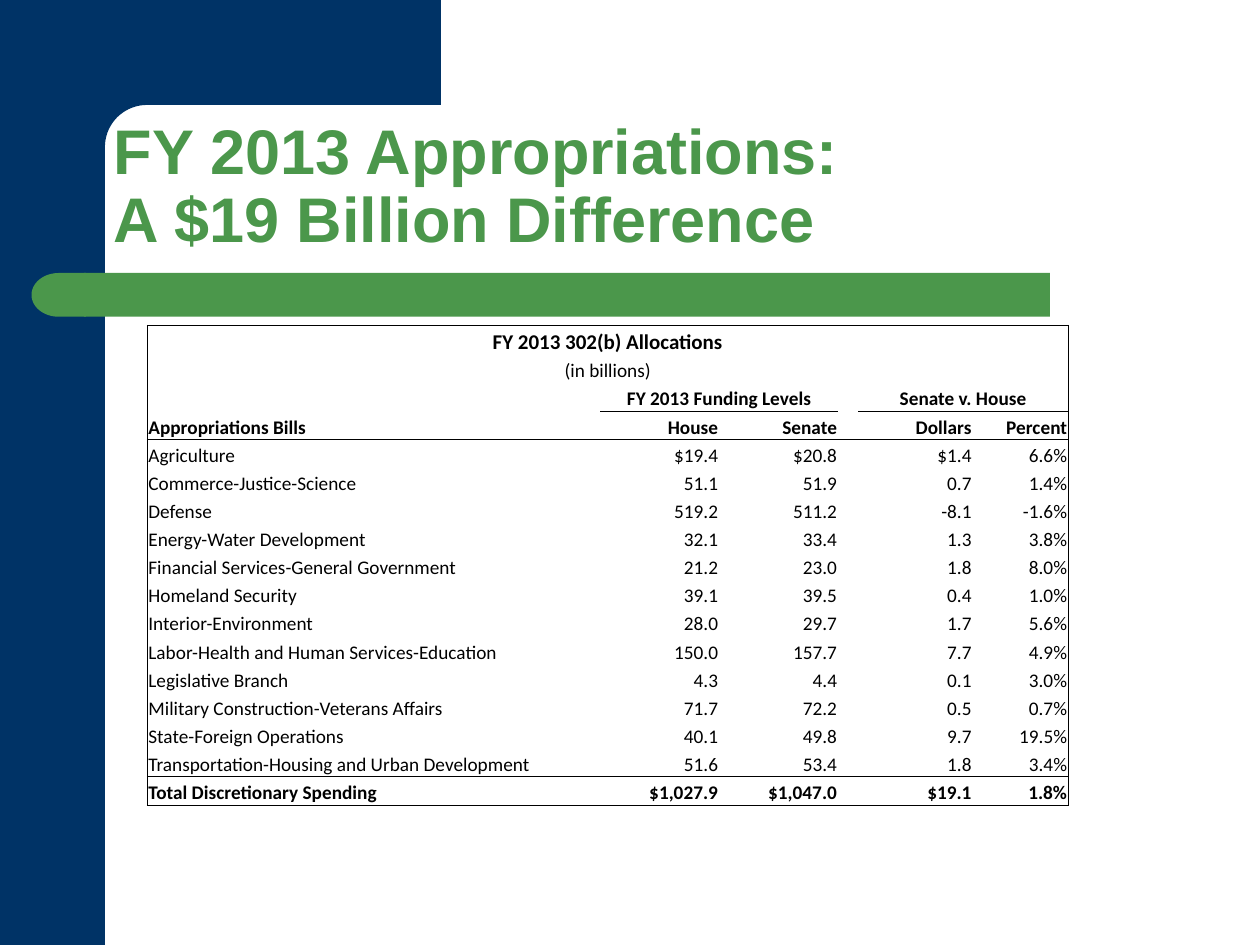
from dataclasses import dataclass
from math import cos, radians, sin

from pptx import Presentation
from pptx.dml.color import RGBColor
from pptx.enum.shapes import MSO_SHAPE
from pptx.enum.text import MSO_ANCHOR, PP_ALIGN
from pptx.oxml.xmlchemy import OxmlElement
from pptx.util import Pt

NAVY = RGBColor(0x00, 0x33, 0x66)
GREEN = RGBColor(0x4B, 0x97, 0x4B)
BLACK = RGBColor(0x00, 0x00, 0x00)
WHITE = RGBColor(0xFF, 0xFF, 0xFF)
RECTANGLE = MSO_SHAPE.RECTANGLE
DELAY = MSO_SHAPE.FLOWCHART_DELAY
BOTTOM = MSO_ANCHOR.BOTTOM
LEFT, CENTER, RIGHT = PP_ALIGN.LEFT, PP_ALIGN.CENTER, PP_ALIGN.RIGHT


@dataclass(frozen=True)
class Panel:
    kind: MSO_SHAPE
    left: float
    top: float
    width: float
    height: float
    color: RGBColor
    rotation: int = 0


@dataclass(frozen=True)
class Heading:
    row: int
    column: int
    span: int
    text: str
    size: int = 11
    bold: bool = True


SIDEBAR = Panel(RECTANGLE, 0, 0, 60, 540, NAVY)
BAR = [
    Panel(RECTANGLE, 48, 156, 552, 25, GREEN),
    Panel(DELAY, 18, 156, 31, 25, GREEN, 180),
]
TITLE_LINES = ["FY 2013 Appropriations:", "A $19 Billion Difference"]
HEADINGS = [
    Heading(0, 0, 6, "FY 2013 302(b) Allocations", 12),
    Heading(1, 0, 6, "(in billions)", 11, False),
    Heading(2, 1, 2, "FY 2013 Funding Levels"),
    Heading(2, 4, 2, "Senate v. House"),
]
ALLOCATIONS = [
    ("Appropriations Bills", "House", "Senate", "Dollars", "Percent"),
    ("Agriculture", "$19.4", "$20.8", "$1.4", "6.6%"),
    ("Commerce-Justice-Science", "51.1", "51.9", "0.7", "1.4%"),
    ("Defense", "519.2", "511.2", "-8.1", "-1.6%"),
    ("Energy-Water Development", "32.1", "33.4", "1.3", "3.8%"),
    ("Financial Services-General Government", "21.2", "23.0", "1.8", "8.0%"),
    ("Homeland Security", "39.1", "39.5", "0.4", "1.0%"),
    ("Interior-Environment", "28.0", "29.7", "1.7", "5.6%"),
    ("Labor-Health and Human Services-Education", "150.0", "157.7", "7.7", "4.9%"),
    ("Legislative Branch", "4.3", "4.4", "0.1", "3.0%"),
    ("Military Construction-Veterans Affairs", "71.7", "72.2", "0.5", "0.7%"),
    ("State-Foreign Operations", "40.1", "49.8", "9.7", "19.5%"),
    ("Transportation-Housing and Urban Development", "51.6", "53.4", "1.8", "3.4%"),
    ("Total Discretionary Spending", "$1,027.9", "$1,047.0", "$19.1", "1.8%"),
]
FIRST_ROW = 3
VALUE_COLUMNS = (0, 1, 2, 4, 5)
GAP_COLUMN = 3
COLUMN_WIDTHS = (258.8, 68, 68, 11.4, 65.5, 54.6)
ROW_COUNT = FIRST_ROW + len(ALLOCATIONS)
ROW_HEIGHTS = [17] + [16.08] * (ROW_COUNT - 1)
FULL_RULES = {0, FIRST_ROW + 1, ROW_COUNT - 1, ROW_COUNT}
CELL_FORMAT = {
    "margin_left": Pt(0.6),
    "margin_right": Pt(0.6),
    "margin_top": Pt(0.6),
    "margin_bottom": Pt(0),
    "vertical_anchor": BOTTOM,
}
TITLE_FORMAT = {
    "margin_left": Pt(5),
    "margin_right": Pt(5),
    "margin_top": Pt(3.6),
    "margin_bottom": Pt(3.6),
    "vertical_anchor": BOTTOM,
    "word_wrap": True,
}


def apply_format(target, values: dict) -> None:
    for name, value in values.items():
        setattr(target, name, value)


def style_font(font, name: str, size: float, bold: bool, color: RGBColor) -> None:
    apply_format(font, {"name": name, "size": Pt(size), "bold": bold})
    font.color.rgb = color


def paint(shape, color: RGBColor) -> None:
    shape.shadow.inherit = False
    shape.fill.solid()
    shape.fill.fore_color.rgb = color
    shape.line.fill.background()


def draw_panel(page, panel: Panel) -> None:
    box = [Pt(length) for length in (panel.left, panel.top, panel.width, panel.height)]
    shape = page.shapes.add_shape(panel.kind, *box)
    shape.rotation = panel.rotation
    paint(shape, panel.color)


def draw_corner(page) -> None:
    center, radius = 84, 24
    arc = [
        (center - radius * sin(radians(angle)), center - radius * cos(radians(angle)))
        for angle in range(0, 91, 5)
    ]
    outline = [(252, 60), *arc, (60, 92), (36, 92), (36, 0)]
    builder = page.shapes.build_freeform(Pt(252), Pt(0))
    builder.add_line_segments([(Pt(x), Pt(y)) for x, y in outline], close=True)
    paint(builder.convert_to_shape(), NAVY)


def draw_title(page) -> None:
    box = page.shapes.add_textbox(Pt(60), Pt(60), Pt(624), Pt(90))
    apply_format(box.text_frame, TITLE_FORMAT)
    para = box.text_frame.paragraphs[0]
    para.line_spacing = 0.9
    for index, line in enumerate(TITLE_LINES):
        if index:
            para.add_line_break()
        span = para.add_run()
        span.text = line
        style_font(span.font, "Arial", 36, True, GREEN)


def is_ruled(boundary: int, column: int) -> bool:
    under_group = boundary == FIRST_ROW and column not in (0, GAP_COLUMN)
    return boundary in FULL_RULES or under_group


def add_border(cell, side: str, visible: bool) -> None:
    line = OxmlElement(f"a:ln{side}")
    line.set("w", str(Pt(0.5)))
    fill = OxmlElement("a:solidFill" if visible else "a:noFill")
    if visible:
        color = OxmlElement("a:srgbClr")
        color.set("val", str(BLACK))
        fill.append(color)
    line.append(fill)
    cell._tc.get_or_add_tcPr().append(line)


def style_cell(cell, row: int, column: int) -> None:
    apply_format(cell, CELL_FORMAT)
    last = column + max(cell.span_width, 1) == len(COLUMN_WIDTHS)
    add_border(cell, "L", column == 0)
    add_border(cell, "R", last)
    add_border(cell, "T", is_ruled(row, column))
    add_border(cell, "B", is_ruled(row + 1, column))
    cell.fill.solid()
    cell.fill.fore_color.rgb = WHITE
    ending = OxmlElement("a:endParaRPr")
    ending.set("sz", "1100")
    cell.text_frame.paragraphs[0]._p.append(ending)


def write_cell(cell, text: str, align: PP_ALIGN, size: float, bold: bool) -> None:
    para = cell.text_frame.paragraphs[0]
    para.alignment = align
    span = para.add_run()
    span.text = text
    style_font(span.font, "Calibri", size, bold, BLACK)


def draw_table(page) -> None:
    width, height = Pt(sum(COLUMN_WIDTHS)), Pt(sum(ROW_HEIGHTS))
    frame = page.shapes.add_table(
        ROW_COUNT, len(COLUMN_WIDTHS), Pt(84.2), Pt(185.8), width, height
    )
    table = frame.table
    apply_format(table, {"first_row": False, "horz_banding": False})
    for column, length in zip(table.columns, COLUMN_WIDTHS):
        column.width = Pt(length)
    for row, length in zip(table.rows, ROW_HEIGHTS):
        row.height = Pt(length)
    for item in HEADINGS:
        cell = table.cell(item.row, item.column)
        cell.merge(table.cell(item.row, item.column + item.span - 1))
        write_cell(cell, item.text, CENTER, item.size, item.bold)
    for row, values in enumerate(ALLOCATIONS, FIRST_ROW):
        bold = row in (FIRST_ROW, ROW_COUNT - 1)
        for column, text in zip(VALUE_COLUMNS, values):
            align = RIGHT if column else LEFT
            write_cell(table.cell(row, column), text, align, 11, bold)
    for row in range(ROW_COUNT):
        for column in range(len(COLUMN_WIDTHS)):
            style_cell(table.cell(row, column), row, column)


def main() -> None:
    deck = Presentation()
    deck.slide_width, deck.slide_height = Pt(720), Pt(540)
    page = deck.slides.add_slide(deck.slide_layouts[6])
    draw_panel(page, SIDEBAR)
    draw_corner(page)
    for panel in BAR:
        draw_panel(page, panel)
    draw_title(page)
    draw_table(page)
    deck.save("out.pptx")


if __name__ == "__main__":
    main()
